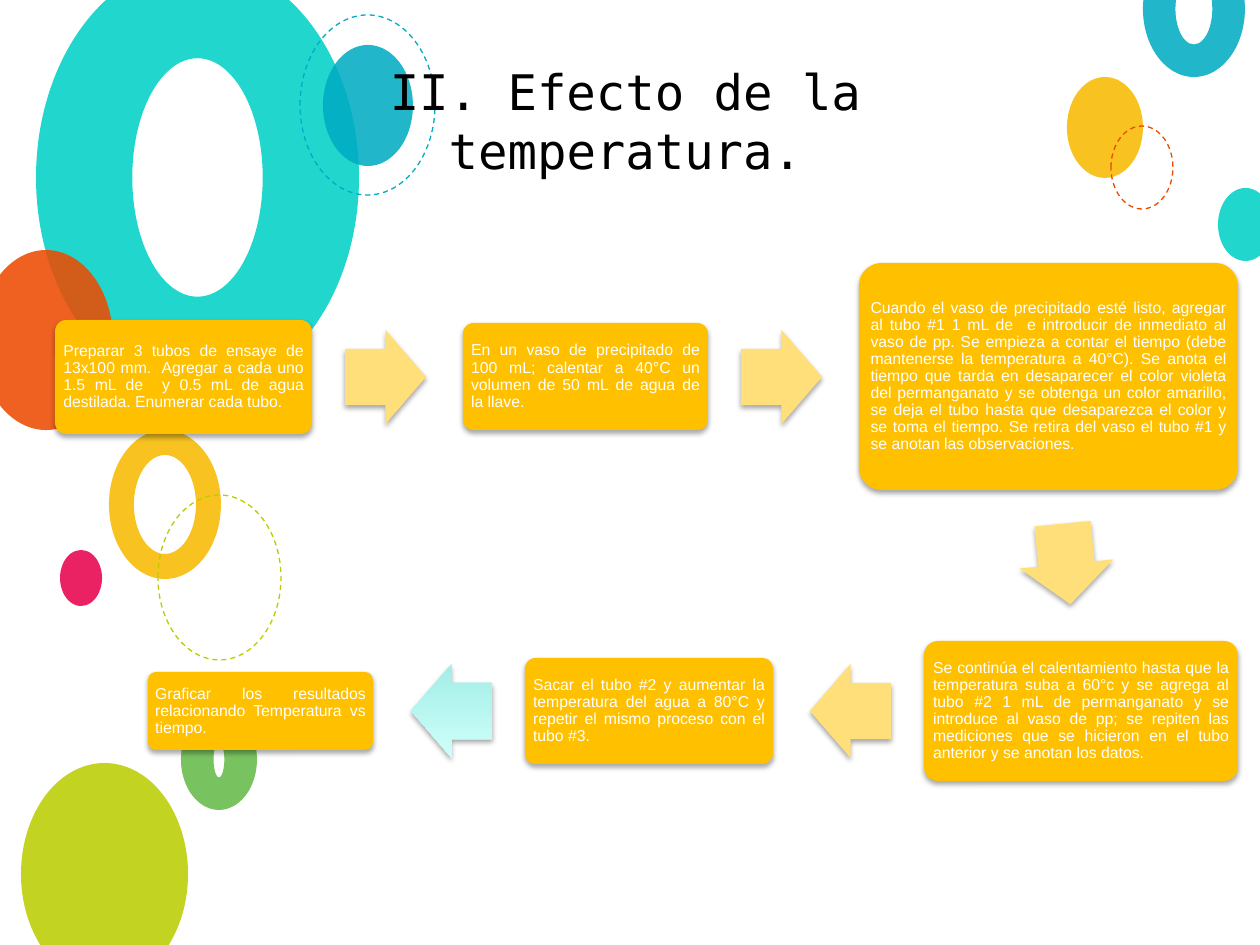
from lxml import etree
from pptx import Presentation
from pptx.dml.color import RGBColor
from pptx.enum.dml import MSO_LINE_DASH_STYLE as DASH
from pptx.enum.shapes import MSO_AUTO_SHAPE_TYPE as SHAPE
from pptx.enum.text import MSO_ANCHOR as ANCHOR, MSO_AUTO_SIZE as AUTO_SIZE, PP_ALIGN as ALIGN
from pptx.oxml import parse_xml
from pptx.oxml.ns import nsdecls, qn
from pptx.util import Emu, Pt

EMU_PER_PX = 914400 / 126
TITLE_ONLY = 5

TEAL = RGBColor(0x00, 0xD1, 0xC6)
CYAN = RGBColor(0x00, 0xAC, 0xC3)
ORANGE = RGBColor(0xED, 0x4A, 0x00)
YELLOW = RGBColor(0xF8, 0xBB, 0x00)
LIME = RGBColor(0xBB, 0xCD, 0x00)
GREEN = RGBColor(0x65, 0xBB, 0x48)
PINK = RGBColor(0xE8, 0x00, 0x4C)
AMBER = RGBColor(0xFF, 0xC0, 0x00)
PALE_AMBER = RGBColor(0xFF, 0xDF, 0x79)
AQUA = RGBColor(0xA3, 0xED, 0xE6)
PALE_AQUA = RGBColor(0xCE, 0xFF, 0xFA)
WHITE = RGBColor(0xFF, 0xFF, 0xFF)
BLACK = RGBColor(0x00, 0x00, 0x00)

RINGS = [
    ((36, -38, 323, 431), TEAL, 0.298),
    ((109, 430, 112, 149), YELLOW, 0.223),
    ((181, 709, 76, 101), GREEN, 0.429),
    ((1143, -59, 102, 136), CYAN, 0.319),
]
DISCS = [
    ((-21, 250, 134, 180), ORANGE),
    ((323, 45, 90, 121), CYAN),
    ((21, 763, 167, 222), LIME),
    ((60, 550, 42, 56), PINK),
    ((1067, 77, 76, 101), YELLOW),
    ((1218, 188, 55, 73), TEAL),
]
DASHED_CIRCLES = [
    ((158, 495, 123, 165), LIME),
    ((300, 15, 135, 180), CYAN),
    ((1111, 126, 62, 83), ORANGE),
]
STEPS = [
    ((55, 320, 257, 114),
     "Preparar 3 tubos de ensaye de 13x100 mm.  Agregar a cada uno 1.5 mL de  "
     "y 0.5 mL de agua destilada. Enumerar cada tubo."),
    ((463, 323, 245, 107),
     "En un vaso de precipitado de 100 mL; calentar a 40°C un volumen de 50 mL "
     "de agua de la llave."),
    ((859, 263, 379, 227),
     "Cuando el vaso de precipitado esté listo, agregar al tubo #1 1 mL de  e "
     "introducir de inmediato al vaso de pp. Se empieza a contar el tiempo (debe "
     "mantenerse la temperatura a 40°C). Se anota el tiempo que tarda en "
     "desaparecer el color violeta del permanganato y se obtenga un color amarillo, "
     "se deja el tubo hasta que desaparezca el color y se toma el tiempo. Se retira "
     "del vaso el tubo #1 y se anotan las observaciones."),
    ((924, 641, 314, 140),
     "Se continúa el calentamiento hasta que la temperatura suba a 60°c y se agrega "
     "al tubo #2 1 mL de permanganato y se introduce al vaso de pp; se repiten las "
     "mediciones que se hicieron en el tubo anterior y se anotan los datos."),
    ((525, 658, 248, 106),
     "Sacar el tubo #2 y aumentar la temperatura del agua a 80°C y repetir el mismo "
     "proceso con el tubo #3."),
    ((148, 672, 225, 78),
     "Graficar los resultados relacionando Temperatura vs tiempo."),
]
ARROWS = [(345, 330, 0), (741, 330, 0), (1026, 517, 84.5), (810, 664, 180)]
LAST_ARROW = (411, 664, 180)
ARROW_SIZE = (81, 94)


def px(length):
    return Emu(round(length * EMU_PER_PX))


def add_shape(slide, kind, box, color=None):
    shape = slide.shapes.add_shape(kind, *map(px, box))
    shape.shadow.inherit = False
    shape.line.fill.background()
    if color is None:
        shape.fill.background()
    else:
        shape.fill.solid()
        shape.fill.fore_color.rgb = color
    return shape


def set_opacity(shape, percent):
    color = shape.fill._xPr.find(qn("a:solidFill"))[0]
    etree.SubElement(color, qn("a:alpha")).set("val", str(percent * 1000))


def add_shadow(shape):
    effects = shape._element.spPr.find(qn("a:effectLst"))
    effects.append(parse_xml(
        f'<a:outerShdw {nsdecls("a")} blurRad="{Pt(3.1)}" dist="{Pt(1.8)}" '
        'dir="5400000" rotWithShape="0"><a:srgbClr val="000000">'
        '<a:alpha val="35000"/></a:srgbClr></a:outerShdw>'))


def add_ring(slide, box, color, thickness):
    ring = add_shape(slide, SHAPE.DONUT, box, color)
    ring.adjustments[0] = thickness
    set_opacity(ring, 87)


def add_disc(slide, box, color):
    set_opacity(add_shape(slide, SHAPE.OVAL, box, color), 87)


def add_dashed_circle(slide, box, color):
    line = add_shape(slide, SHAPE.OVAL, box).line
    line.color.rgb = color
    line.width = Pt(0.75)
    line.dash_style = DASH.DASH


def format_paragraph(paragraph, alignment, font_name, size, color):
    paragraph.alignment = alignment
    for run in paragraph.runs:
        run.font.name = font_name
        run.font.size = Pt(size)
        run.font.color.rgb = color


def set_title(slide, box, text):
    title = slide.shapes.title
    title.left, title.top, title.width, title.height = map(px, box)
    frame = title.text_frame
    frame.text = text
    frame.word_wrap = True
    frame.auto_size = AUTO_SIZE.NONE
    frame.vertical_anchor = ANCHOR.TOP
    format_paragraph(frame.paragraphs[0], ALIGN.CENTER, "DejaVu Sans Mono", 28, BLACK)
    title.element.getparent().append(title.element)


def add_step(slide, box, text):
    step = add_shape(slide, SHAPE.ROUNDED_RECTANGLE, box, AMBER)
    step.adjustments[0] = 0.1
    add_shadow(step)
    frame = step.text_frame
    frame.text = text
    frame.word_wrap = True
    frame.vertical_anchor = ANCHOR.MIDDLE
    frame.margin_left = frame.margin_right = px(5)
    frame.margin_top = frame.margin_bottom = px(5)
    paragraph = frame.paragraphs[0]
    paragraph.line_spacing = 0.9
    format_paragraph(paragraph, ALIGN.JUSTIFY, "Arial", 9, WHITE)


def add_arrow(slide, left, top, rotation):
    arrow = add_shape(slide, SHAPE.RIGHT_ARROW, (left, top, *ARROW_SIZE), PALE_AMBER)
    arrow.adjustments[0] = 0.6
    arrow.adjustments[1] = 0.5
    arrow.rotation = rotation
    add_shadow(arrow)
    return arrow


def set_gradient(shape, start, end):
    shape.fill.gradient()
    shape.fill.gradient_angle = 90
    for stop, color in zip(shape.fill.gradient_stops, (start, end)):
        stop.color.rgb = color


def main():
    presentation = Presentation()
    presentation.slide_width, presentation.slide_height = px(1260), px(945)
    slide = presentation.slides.add_slide(presentation.slide_layouts[TITLE_ONLY])
    for ring in RINGS:
        add_ring(slide, *ring)
    for disc in DISCS:
        add_disc(slide, *disc)
    for circle in DASHED_CIRCLES:
        add_dashed_circle(slide, *circle)
    set_title(slide, (362, 55, 527, 130), "II. Efecto de la temperatura.")
    for step in STEPS:
        add_step(slide, *step)
    for arrow in ARROWS:
        add_arrow(slide, *arrow)
    set_gradient(add_arrow(slide, *LAST_ARROW), AQUA, PALE_AQUA)
    presentation.save("out.pptx")


if __name__ == "__main__":
    main()
